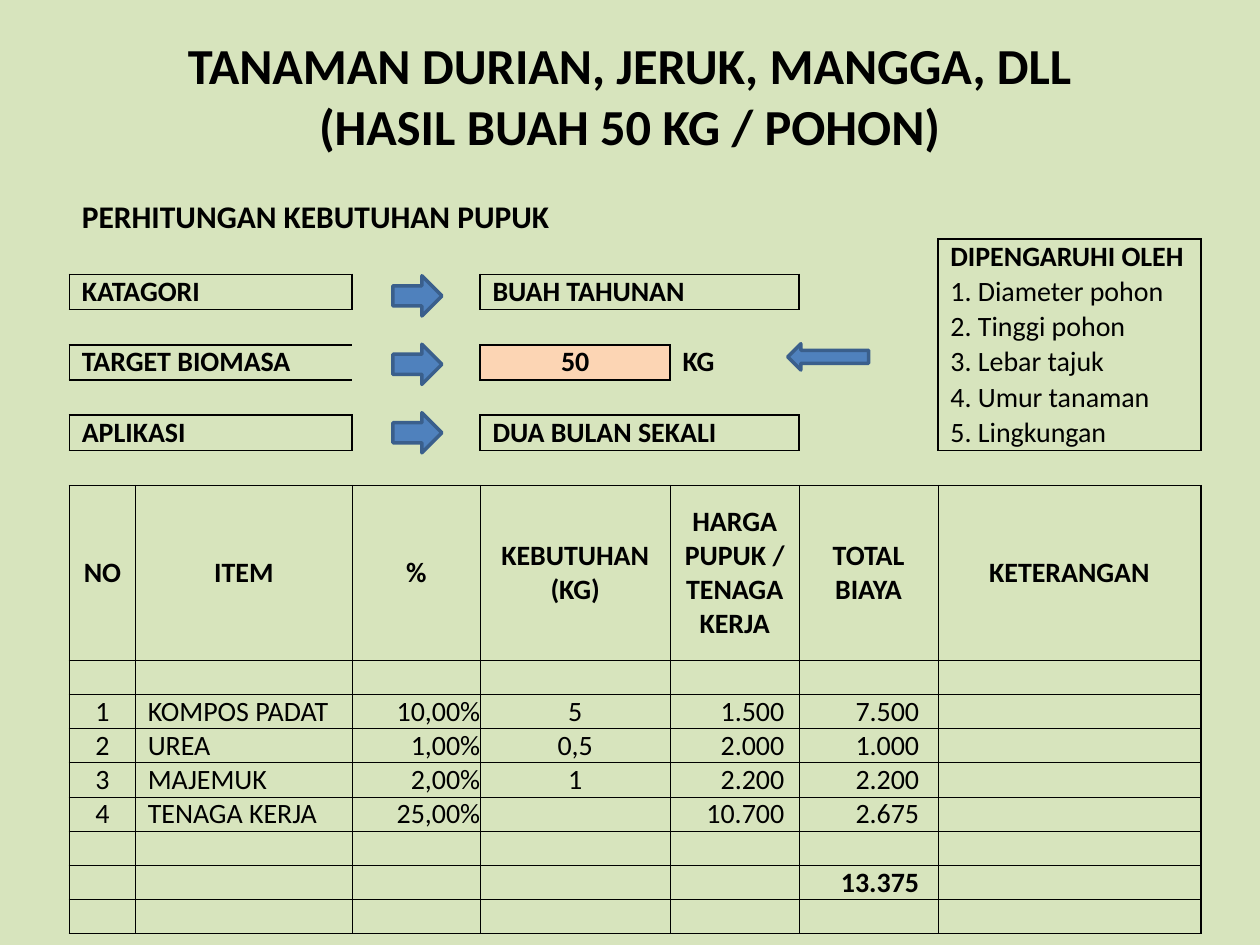
"""Build the fertiliser requirement slide for fruit trees."""
from collections import defaultdict
from dataclasses import dataclass
from itertools import product

from lxml import etree
from pptx import Presentation
from pptx.dml.color import RGBColor
from pptx.enum.shapes import MSO_SHAPE
from pptx.enum.text import MSO_ANCHOR, PP_ALIGN
from pptx.oxml.ns import qn
from pptx.util import Cm, Pt

LEFT, CENTER, RIGHT = PP_ALIGN.LEFT, PP_ALIGN.CENTER, PP_ALIGN.RIGHT
MIDDLE = MSO_ANCHOR.MIDDLE
RIGHT_ARROW, LEFT_ARROW = MSO_SHAPE.RIGHT_ARROW, MSO_SHAPE.LEFT_ARROW
NO_STYLE = "{2D5ABB26-0587-4C30-8999-92F81FD0307C}"


@dataclass(frozen=True)
class Theme:
    font: str = "Calibri"
    ink: str = "000000"
    background: str = "D7E4BD"
    header: str = "D7E4BC"
    target: str = "FCD5B4"
    arrow: str = "4F81BD"
    arrow_line: str = "3A5F8C"
    title_size: float = 28.8
    heading_size: float = 18
    body_size: float = 16
    thin: float = 0.5
    thick: float = 1


THEME = Theme()
COLUMNS = [1.33, 4.37, 2.58, 3.83, 2.6, 2.8, 5.3]
ROWS = [0.87] + [0.71] * 7 + [3.52] + [0.69] * 8
HEADER_ROW, FIRST_ITEM_ROW, TOTAL_ROW = 8, 10, 15
LAST_ROW, LAST_COLUMN = len(ROWS) - 1, len(COLUMNS) - 1
INDENT = 0.25

INPUTS = [(2, "KATAGORI", "BUAH TAHUNAN"), (6, "APLIKASI", "DUA BULAN SEKALI")]
FACTORS = ["DIPENGARUHI OLEH", "1. Diameter pohon", "2. Tinggi pohon",
           "3. Lebar tajuk", "4. Umur tanaman", "5. Lingkungan"]
HEADERS = ["NO", "ITEM", "%", "KEBUTUHAN (KG)", "HARGA PUPUK / TENAGA KERJA",
           "TOTAL BIAYA", "KETERANGAN"]
ITEMS = [
    ["1", "KOMPOS PADAT", "10,00%", "5", "1.500", "7.500"],
    ["2", "UREA", "1,00%", "0,5", "2.000", "1.000"],
    ["3", "MAJEMUK", "2,00%", "1", "2.200", "2.200"],
    ["4", "TENAGA KERJA", "25,00%", "", "10.700", "2.675"],
]
ITEM_FORMATS = [
    dict(align=CENTER), dict(indent=INDENT), dict(align=RIGHT), dict(align=CENTER),
    dict(align=RIGHT, right=0.3), dict(align=RIGHT, right=0.38),
]


def write_text(frame, text, *, size=THEME.body_size, bold=False, align=LEFT):
    paragraph = frame.paragraphs[0]
    paragraph.text = text
    paragraph.alignment = align
    for run in paragraph.runs:
        run.font.name, run.font.size, run.font.bold = THEME.font, Pt(size), bold
        run.font.color.rgb = RGBColor.from_string(THEME.ink)
    if not text:
        paragraph._p.get_or_add_endParaRPr().set("sz", str(int(size * 100)))


class SlideBuilder:
    def __init__(self, slide, theme):
        self.slide, self.theme = slide, theme
        self.borders = defaultdict(dict)
        self.paint(slide.background.fill, theme.background)

    def paint(self, fill, color):
        fill.solid()
        fill.fore_color.rgb = RGBColor.from_string(color)

    def title(self, text, left, top, width, height):
        frame = self.slide.shapes.add_textbox(
            Cm(left), Cm(top), Cm(width), Cm(height)).text_frame
        frame.word_wrap, frame.vertical_anchor = True, MIDDLE
        write_text(frame, text, size=self.theme.title_size, bold=True, align=CENTER)

    def arrow(self, kind, left, top, width, height):
        arrow = self.slide.shapes.add_shape(kind, Cm(left), Cm(top), Cm(width), Cm(height))
        arrow.shadow.inherit = False
        self.paint(arrow.fill, self.theme.arrow)
        arrow.line.color.rgb = RGBColor.from_string(self.theme.arrow_line)
        arrow.line.width = Pt(2)

    def table(self, left, top):
        frame = self.slide.shapes.add_table(
            len(ROWS), len(COLUMNS), Cm(left), Cm(top), Cm(sum(COLUMNS)), Cm(sum(ROWS)))
        self.grid = frame.table
        self.grid.first_row = self.grid.horz_banding = False
        self.grid._tbl.tblPr.find(qn("a:tableStyleId")).text = NO_STYLE
        for column, width in zip(self.grid.columns, COLUMNS):
            column.width = Cm(width)
        for row, height in zip(self.grid.rows, ROWS):
            row.height = Cm(height)
        for row, column in product(range(len(ROWS)), range(len(COLUMNS))):
            self.cell(row, column, "")

    def cell(self, row, column, text, *, fill=None, indent=0, right=0, span=1, **style):
        cell = self.grid.cell(row, column)
        if span > 1:
            cell.merge(self.grid.cell(row, column + span - 1))
        cell.margin_left, cell.margin_right = Cm(indent), Cm(right)
        cell.margin_top = cell.margin_bottom = 0
        cell.vertical_anchor = MIDDLE
        if fill:
            self.paint(cell.fill, fill)
        else:
            cell.fill.background()
        write_text(cell.text_frame, text, **style)

    def outline(self, top, left, bottom, right, width, sides="LRTB"):
        for row, column in product(range(top, bottom + 1), range(left, right + 1)):
            spanned = self.grid.cell(row, column).is_merge_origin
            edges = [("L", column == left, row, column - 1, "R"),
                     ("R", column == right or spanned, row, column + 1, "L"),
                     ("T", row == top, row - 1, column, "B"),
                     ("B", row == bottom, row + 1, column, "T")]
            for side, outer, near_row, near_column, near_side in edges:
                if outer and side in sides:
                    self.borders[row, column][side] = width
                    self.borders[near_row, near_column][near_side] = width

    def draw_borders(self):
        for row, column in product(range(len(ROWS)), range(len(COLUMNS))):
            properties = self.grid.cell(row, column)._tc.get_or_add_tcPr()
            widths = self.borders[row, column]
            for position, side in enumerate("LRTB"):
                line = etree.Element(qn(f"a:ln{side}"), w=str(Pt(widths.get(side, 0))))
                if side in widths:
                    fill = etree.SubElement(line, qn("a:solidFill"))
                    etree.SubElement(fill, qn("a:srgbClr"), val=self.theme.ink)
                else:
                    etree.SubElement(line, qn("a:noFill"))
                properties.insert(position, line)


def fill_inputs(builder):
    builder.cell(0, 0, "PERHITUNGAN KEBUTUHAN PUPUK", span=4, indent=INDENT,
                 size=THEME.heading_size, bold=True)
    for row, label, value in INPUTS:
        for column, text in ((0, label), (3, value)):
            builder.cell(row, column, text, span=2, indent=INDENT, bold=True)
            builder.outline(row, column, row, column + 1, THEME.thick)
    builder.cell(4, 0, "TARGET BIOMASA", span=2, indent=INDENT, bold=True)
    builder.outline(4, 0, 4, 1, THEME.thick, sides="LTB")
    builder.cell(4, 3, "50", fill=THEME.target, bold=True, align=CENTER)
    builder.outline(4, 3, 4, 3, THEME.thick)
    builder.cell(4, 4, "KG", indent=INDENT, bold=True)
    for row, factor in enumerate(FACTORS, start=1):
        builder.cell(row, LAST_COLUMN, factor, indent=INDENT, bold=row == 1)
    builder.outline(1, LAST_COLUMN, len(FACTORS), LAST_COLUMN, THEME.thick)


def fill_costs(builder):
    for column, header in enumerate(HEADERS):
        builder.cell(HEADER_ROW, column, header, fill=THEME.header, bold=True, align=CENTER)
    for row, item in enumerate(ITEMS, start=FIRST_ITEM_ROW):
        for column, (value, style) in enumerate(zip(item, ITEM_FORMATS)):
            builder.cell(row, column, value, **style)
    builder.cell(TOTAL_ROW, 5, "13.375", bold=True, **ITEM_FORMATS[5])
    for row, column in product(range(HEADER_ROW, LAST_ROW + 1), range(len(COLUMNS))):
        builder.outline(row, column, row, column, THEME.thin)
    builder.outline(HEADER_ROW, 0, LAST_ROW, LAST_COLUMN, THEME.thick)


def main():
    presentation = Presentation()
    presentation.slide_width, presentation.slide_height = Cm(25.4), Cm(19.05)
    slide = presentation.slides.add_slide(presentation.slide_layouts[6])
    builder = SlideBuilder(slide, THEME)
    builder.title("TANAMAN DURIAN, JERUK, MANGGA, DLL\v(HASIL BUAH 50 KG / POHON)",
                  1.27, 0.6, 22.86, 2.62)
    builder.table(1.4, 3.95)
    fill_inputs(builder)
    fill_costs(builder)
    builder.draw_borders()
    for step in range(3):
        builder.arrow(RIGHT_ARROW, 7.92, 5.56 + 1.38 * step, 0.99, 0.81)
    builder.arrow(LEFT_ARROW, 15.88, 6.93, 1.63, 0.53)
    presentation.save("out.pptx")


if __name__ == "__main__":
    main()
